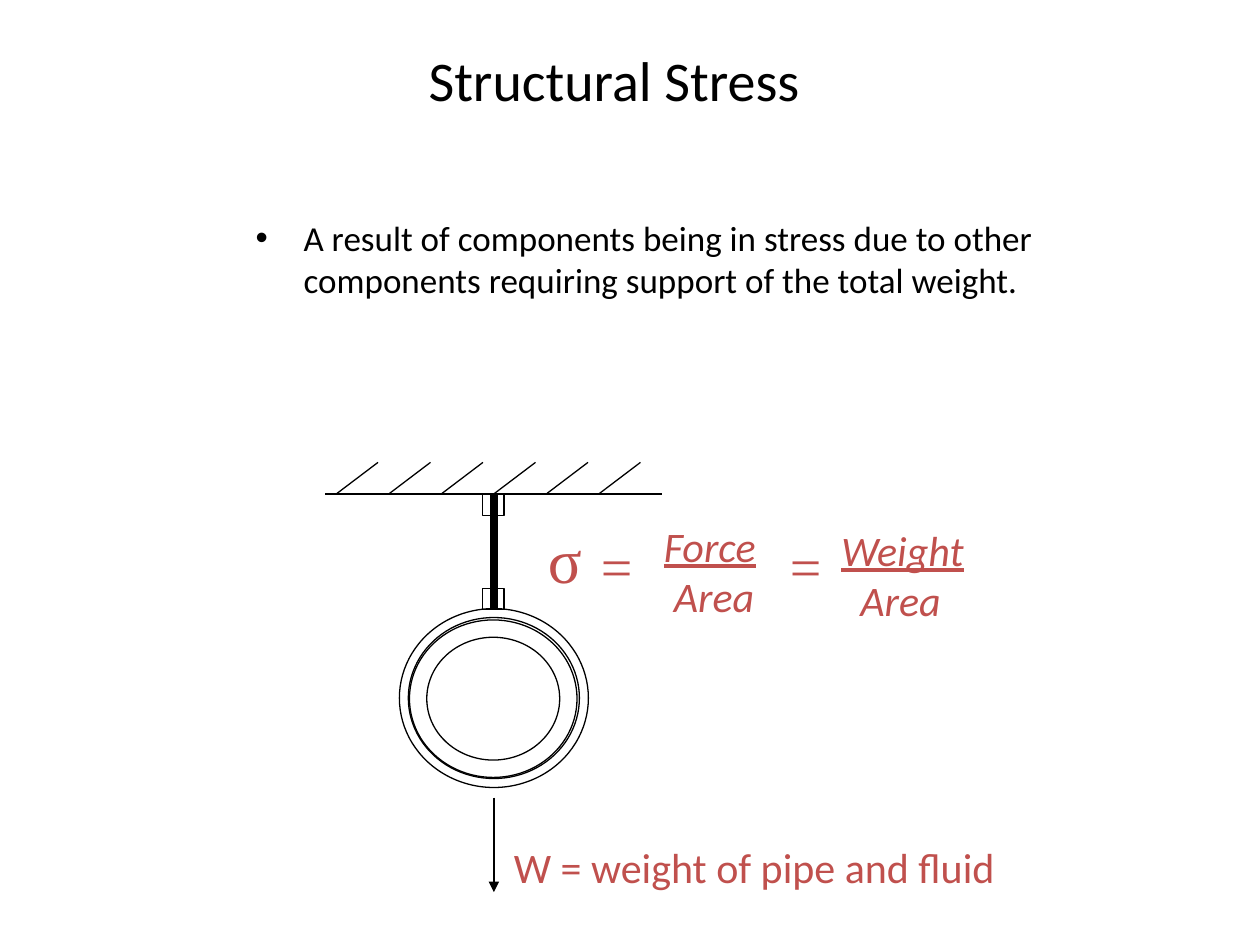
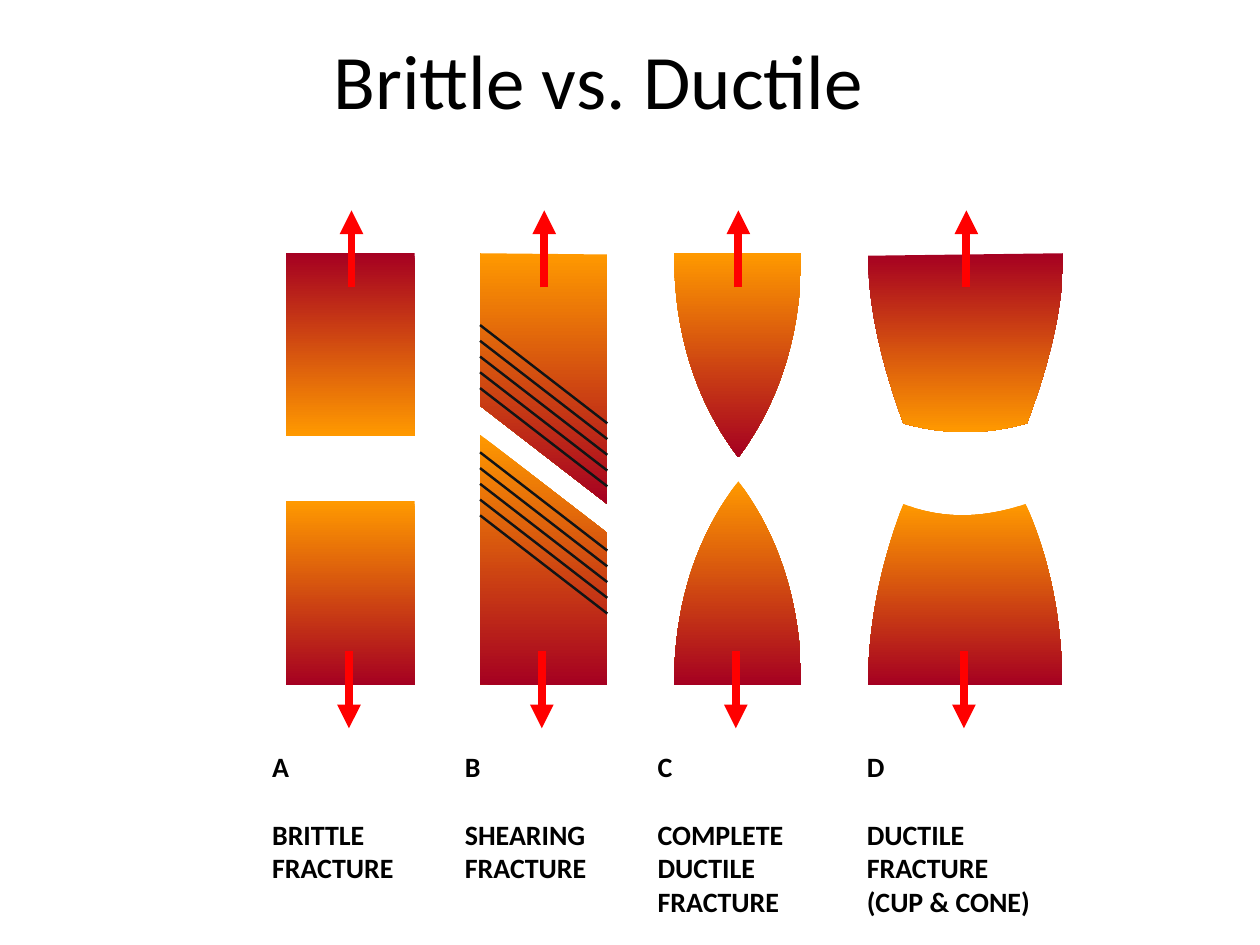
import pptx
import pptx.util
import pptx.dml.color
import pptx.enum.shapes
import pptx.enum.text
import pptx.oxml.ns
import lxml.etree

Inches = pptx.util.Inches
Pt = pptx.util.Pt
qn = pptx.oxml.ns.qn
kinds = pptx.enum.shapes.MSO_SHAPE
center = pptx.enum.text.PP_ALIGN.CENTER
middle = pptx.enum.text.MSO_ANCHOR.MIDDLE

# Shared colours and fonts
BLACK, RED, ROSE = "000000", "FF0000", "C0504D"
DARK, GOLD, HATCH = "A50021", "FF9900", "121415"
SANS, SERIF = "Calibri", "Times New Roman"


def hue(code):
    return pptx.dml.color.RGBColor.from_string(code)


def text(frame, words, size=24, font=SANS, color=BLACK, bold=False, italic=False,
         under=False, align=None, before=0, indent=0, bullet=None):
    """Fill the first empty paragraph, or add one below."""
    para = frame.paragraphs[-1]
    if para.text:
        para = frame.add_paragraph()
    para.alignment = align
    para.space_before = Pt(before)
    props = para._p.get_or_add_pPr()
    if indent:
        props.set("marL", str(Inches(indent)))
    if bullet:
        props.set("indent", str(-Inches(indent)))
        lxml.etree.SubElement(props, qn("a:buFont")).set("typeface", "Arial")
        lxml.etree.SubElement(props, qn("a:buChar")).set("char", bullet)
    run = para.add_run()
    run.text = words
    face = run.font
    face.size, face.name = Pt(size), font
    face.bold, face.italic, face.underline = bold, italic, under
    face.color.rgb = hue(color)


deck = pptx.Presentation()
deck.slide_width, deck.slide_height = Inches(10), Inches(7.5)

# Slides and titles
slides = []
for words, left, width, size in [("Structural Stress", 0.25, 9.25, 32),
                                 ("Brittle vs. Ductile", 0, 9.5, 44)]:
    slide = deck.slides.add_slide(deck.slide_layouts[5])
    title = slide.shapes.title
    title.left, title.top = Inches(left), Inches(0)
    title.width, title.height = Inches(width), Inches(1.25)
    title.text_frame.vertical_anchor = middle
    text(title.text_frame, words, size=size, align=center)
    slides.append(slide)
stress, breaks = [slide.shapes for slide in slides]

# Each line: shapes, start x and y, end x and y, colour, width, arrow
lines = []

# Stress: pipe rings and rod clamps
for kind, x, y, w, h, ring in [(kinds.DONUT, 3.17, 4.83, 1.5, 1.42, 0.05),
                               (kinds.DONUT, 3.25, 4.92, 1.33, 1.25, 0.11),
                               (kinds.RECTANGLE, 3.83, 4.67, 0.17, 0.17, None),
                               (kinds.RECTANGLE, 3.83, 3.92, 0.17, 0.17, None)]:
    shape = stress.add_shape(kind, Inches(x), Inches(y), Inches(w), Inches(h))
    if ring:
        shape.adjustments[0] = ring
    shape.shadow.inherit = False
    shape.fill.background()
    shape.line.color.rgb = hue(BLACK)
    shape.line.width = Pt(0.75)

# Stress: ceiling, rod, weight arrow and ceiling hatch
lines.append((stress, 2.58, 3.92, 5.25, 3.92, BLACK, 0.75, False))
lines.append((stress, 3.92, 4.83, 3.92, 3.92, BLACK, 4.5, False))
lines.append((stress, 3.92, 6.33, 3.92, 7.08, BLACK, 0.75, True))
for i in range(6):
    x = 2.67 + i * 5 / 12
    lines.append((stress, x, 3.92, x + 0.33, 3.67, BLACK, 0.75, False))

# Stress: formula and weight note
for words, x, y, w, h, size, font in [
        ("W = weight of pipe and fluid", 3.98, 6.63, 4.31, 0.5, 24, SANS),
        ("=", 4.67, 4.17, 0.45, 0.63, 32, SERIF),
        ("σ", 4.25, 4.08, 0.57, 0.7, 36, SERIF),
        ("=", 6.17, 4.17, 0.45, 0.63, 32, SERIF)]:
    frame = stress.add_textbox(Inches(x), Inches(y), Inches(w), Inches(h)).text_frame
    frame.word_wrap = True
    text(frame, words, size=size, font=font, color=ROSE)
for words, x, y, w, shift in [("Force", 5.17, 4.08, 1.05, 0.08),
                              ("Weight", 6.58, 4.11, 1.25, 0.15)]:
    frame = stress.add_textbox(Inches(x), Inches(y), Inches(w), Inches(0.9)).text_frame
    frame.word_wrap = True
    text(frame, words, color=ROSE, italic=True, under=True)
    text(frame, "Area", color=ROSE, italic=True, indent=shift)

# Stress: bullet
frame = stress.add_textbox(Inches(1.83), Inches(1.67), Inches(7.97), Inches(1.74)).text_frame
frame.word_wrap = True
frame.margin_left = frame.margin_right = Inches(0.2)
text(frame, "A result of components being in stress due to other components "
     "requiring support of the total weight.", size=20, indent=0.38, bullet="•")

# Breaks: labels
for x, w, words in [(2.16, 1.22, ["A", "BRITTLE", "FRACTURE"]),
                    (3.69, 1.22, ["B", "SHEARING", "FRACTURE"]),
                    (5.22, 1.23, ["C", "COMPLETE", "DUCTILE", "FRACTURE"]),
                    (6.88, 1.54, ["D", "DUCTILE", "FRACTURE", "(CUP & CONE)"])]:
    high = 0.27 * (len(words) + 1)
    frame = breaks.add_textbox(Inches(x), Inches(5.95), Inches(w), Inches(high)).text_frame
    frame.word_wrap = True
    frame.margin_left = frame.margin_right = frame.margin_top = frame.margin_bottom = 0
    for i, word in enumerate(words):
        text(frame, word, size=16, bold=True, before=19.5 if i == 1 else 0)

# Breaks: brittle halves; each part is a shape with its top and bottom colour
parts = []
for y, high, top, base in [(2.01, 1.45, DARK, GOLD), (3.98, 1.46, GOLD, DARK)]:
    shape = breaks.add_shape(kinds.RECTANGLE, Inches(2.27), Inches(y), Inches(1.02), Inches(high))
    parts.append((shape, top, base))

# Breaks: outlines made of corners (one point) and curves (start, pull, end)
for top, base, edges in [
        (GOLD, DARK, [[(3.81, 2.01)], [(4.82, 2.02)], [(4.82, 4)], [(3.81, 3.22)]]),
        (GOLD, DARK, [[(3.81, 3.45)], [(4.82, 4.23)], [(4.82, 5.44)], [(3.81, 5.43)]]),
        (GOLD, DARK, [[(5.35, 2.01), (5.35, 2.96), (5.86, 3.63)],
                      [(5.86, 3.63), (6.36, 2.96), (6.36, 2.01)]]),
        (GOLD, DARK, [[(5.35, 5.44), (5.35, 4.49), (5.86, 3.82)],
                      [(5.86, 3.82), (6.36, 4.49), (6.36, 5.44)]]),
        (DARK, GOLD, [[(6.89, 2.03), (6.89, 2.6), (7.17, 3.36)],
                      [(7.17, 3.36), (7.66, 3.5), (8.15, 3.36)],
                      [(8.15, 3.36), (8.44, 2.6), (8.44, 2.01)]]),
        (GOLD, DARK, [[(6.89, 5.44), (6.89, 4.74), (7.17, 4)],
                      [(7.17, 4), (7.62, 4.18), (8.14, 4)],
                      [(8.14, 4), (8.43, 4.66), (8.43, 5.44)]])]:
    dots = []
    for edge in edges:
        if len(edge) == 1:
            dots += edge
            continue
        for i in range(21):
            t = i / 20
            mix = [(1 - t) ** 2, 2 * t * (1 - t), t ** 2]
            dots.append([sum(m * p[k] for m, p in zip(mix, edge)) for k in (0, 1)])
    dots = [(Inches(x), Inches(y)) for x, y in dots]
    pen = breaks.build_freeform(*dots[0])
    pen.add_line_segments(dots[1:], close=True)
    parts.append((pen.convert_to_shape(), top, base))

for shape, top, base in parts:
    shape.shadow.inherit = False
    shape.line.fill.background()
    shape.fill.gradient()
    shape.fill.gradient_angle = 270
    for stop, code, place in zip(shape.fill.gradient_stops, (top, base), (0, 1)):
        stop.color.rgb = hue(code)
        stop.position = place

# Breaks: shear lines and pull arrows
for y in (2.58, 3.59):
    for i in range(5):
        lines.append((breaks, 3.81, y + i / 8, 4.82, y + i / 8 + 0.78, HATCH, 1.38, False))
for x in (2.79, 4.32, 5.86, 7.67):
    lines.append((breaks, x, 2.28, x, 1.67, RED, 4.5, True))
    lines.append((breaks, x - 0.02, 5.17, x - 0.02, 5.78, RED, 4.5, True))

# Draw all lines
for shapes, x1, y1, x2, y2, code, wide, arrow in lines:
    link = shapes.add_connector(pptx.enum.shapes.MSO_CONNECTOR.STRAIGHT,
                                Inches(x1), Inches(y1), Inches(x2), Inches(y2))
    link.line.color.rgb = hue(code)
    link.line.width = Pt(wide)
    props = link._element.spPr
    if arrow:
        lxml.etree.SubElement(props.find(qn("a:ln")), qn("a:tailEnd")).set("type", "triangle")
    lxml.etree.SubElement(props, qn("a:effectLst"))

deck.save("out.pptx")
